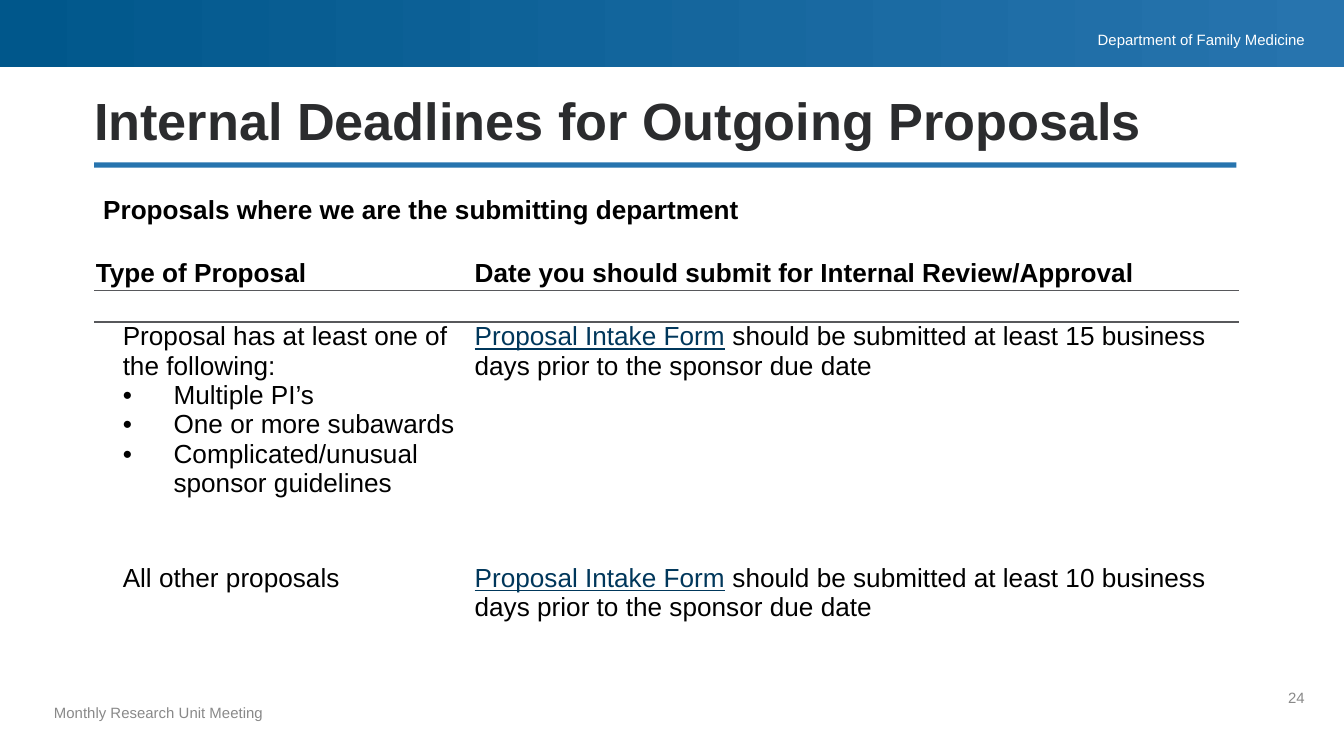
import pptx
import pptx.dml.color
import pptx.enum.shapes
import pptx.enum.text
import pptx.oxml
import pptx.oxml.ns
import pptx.util

Cm = pptx.util.Cm
Pt = pptx.util.Pt
RGBColor = pptx.dml.color.RGBColor
ALIGN = pptx.enum.text.PP_ALIGN
ANCHOR = pptx.enum.text.MSO_ANCHOR

BLUE = RGBColor(0x27, 0x74, 0xAE)
DEEP_BLUE = RGBColor(0x00, 0x57, 0x8B)
LINK = RGBColor(0x00, 0x37, 0x5B)
DARK = RGBColor(0x2B, 0x2C, 0x2E)
GREY = RGBColor(0x89, 0x89, 0x89)
RULE = RGBColor(0x57, 0x58, 0x5B)
BLACK = RGBColor(0, 0, 0)
WHITE = RGBColor(0xFF, 0xFF, 0xFF)

NS = pptx.oxml.ns.nsdecls("a")
NO_STYLE = "{2D5ABB26-0587-4C30-8999-92F81FD0307C}"
NO_INSETS = dict(margin_left=0, margin_top=0, margin_right=0, margin_bottom=0)
CELL = dict(NO_INSETS, margin_left=Cm(0.03), margin_right=Cm(0.03))
BODY = dict(name="Arial", size=Pt(14), bold=False)
HEADING = dict(BODY, bold=True)
SMALL = dict(name="Arial", size=Pt(8))


def set_attrs(obj, values):
    for name, value in values.items():
        setattr(obj, name, value)


def add_run(p, text, font, color=BLACK):
    r = p.add_run()
    r.text = text
    set_attrs(r.font, font)
    r.font.color.rgb = color


def add_bar(s, box):
    sp = s.shapes.add_shape(pptx.enum.shapes.MSO_SHAPE.RECTANGLE, *map(Cm, box))
    sp.shadow.inherit = False
    sp.line.fill.background()
    return sp


def add_text(s, box, text, font, color, frame, para):
    tf = s.shapes.add_textbox(*map(Cm, box)).text_frame
    set_attrs(tf, dict(word_wrap=True, **frame))
    p = tf.paragraphs[0]
    set_attrs(p, para)
    add_run(p, text, font, color)


def add_bullet(p):
    pPr = p._p.get_or_add_pPr()
    pPr.set("marL", str(Cm(0.96)))
    pPr.set("indent", str(-Cm(0.96)))
    pPr.append(pptx.oxml.parse_xml(f'<a:buFont {NS} typeface="Arial"/>'))
    pPr.append(pptx.oxml.parse_xml(f'<a:buChar {NS} char="•"/>'))


def add_border(cell, side):
    cell._tc.get_or_add_tcPr().insert(0, pptx.oxml.parse_xml(
        f'<a:{side} {NS} w="{Pt(1)}"><a:solidFill><a:srgbClr val="{RULE}"/>'
        f'</a:solidFill></a:{side}>'))


def add_table(s, box, widths, heights):
    table = s.shapes.add_table(len(heights), len(widths), *map(Cm, box)).table
    set_attrs(table, dict(first_row=False, horz_banding=False))
    table._tbl.tblPr.find(pptx.oxml.ns.qn("a:tableStyleId")).text = NO_STYLE
    for column, width in zip(table.columns, widths):
        column.width = Cm(width)
    for row, height in zip(table.rows, heights):
        row.height = Cm(height)
    for cell in table.iter_cells():
        set_attrs(cell, CELL)
        cell.fill.background()
        end = cell.text_frame.paragraphs[0]._p.get_or_add_endParaRPr()
        end.set("sz", "1400")
    return table


def fill_deadline(cell, days):
    p = cell.text_frame.paragraphs[0]
    add_run(p, "Proposal Intake Form", dict(BODY, underline=True), LINK)
    add_run(p, f" should be submitted at least {days} business days prior "
               "to the sponsor due date", BODY)
    return p


def add_deadlines(s):
    table = add_table(s, (1.78, 4.9, 21.64, 6.9),
                      (0.51, 6.65, 14.48), (0.59, 0.59, 4.57, 1.15))
    table.cell(0, 0).merge(table.cell(0, 1))
    table.cell(1, 0).merge(table.cell(1, 2))
    for col in range(3):
        add_border(table.cell(0, col), "lnB")
        add_border(table.cell(1, col), "lnT")

    for col, text in ((0, "Type of Proposal"),
                      (2, "Date you should submit for Internal Review/Approval")):
        add_run(table.cell(0, col).text_frame.paragraphs[0], text, HEADING)

    tf = table.cell(2, 1).text_frame
    add_run(tf.paragraphs[0], "Proposal has at least one of the following:", BODY)
    for text in ("Multiple PI’s", "One or more subawards",
                 "Complicated/unusual sponsor guidelines"):
        p = tf.add_paragraph()
        add_bullet(p)
        add_run(p, text, BODY)
    p.space_after = Pt(12)

    add_run(table.cell(3, 1).text_frame.paragraphs[0], "All other proposals", BODY)
    fill_deadline(table.cell(2, 2), 15)
    fill_deadline(table.cell(3, 2), 10).space_after = Pt(12)


def main():
    prs = pptx.Presentation()
    set_attrs(prs, dict(slide_width=Cm(25.4), slide_height=Cm(14.29)))
    s = prs.slides.add_slide(prs.slide_layouts[6])

    rule = add_bar(s, (1.78, 3.07, 21.59, 0.1))
    rule.fill.solid()
    rule.fill.fore_color.rgb = BLUE

    banner = add_bar(s, (0, 0, 25.4, 1.27))
    banner.fill.gradient()
    banner.fill.gradient_angle = 0
    for stop, color in zip(banner.fill.gradient_stops, (DEEP_BLUE, BLUE)):
        stop.color.rgb = color

    add_text(s, (18.29, 0.58, 6.38, 0.36), "Department of Family Medicine",
             SMALL, WHITE, NO_INSETS, dict(alignment=ALIGN.RIGHT))
    add_text(s, (1.02, 13.23, 9.91, 1.02), "Monthly Research Unit Meeting",
             SMALL, GREY, dict(NO_INSETS, margin_bottom=Cm(0.89),
                               vertical_anchor=ANCHOR.BOTTOM),
             dict(line_spacing=0.9))
    add_text(s, (23.39, 13.21, 1.27, 1.02), "24", SMALL, GREY,
             dict(NO_INSETS, margin_bottom=Cm(0.71)),
             dict(alignment=ALIGN.RIGHT))
    add_text(s, (1.78, 1.8, 21.59, 1.07),
             "Internal Deadlines for Outgoing Proposals",
             dict(name="Arial", size=Pt(28), bold=True), DARK,
             dict(NO_INSETS, vertical_anchor=ANCHOR.BOTTOM),
             dict(line_spacing=0.9))
    add_deadlines(s)
    add_text(s, (1.7, 3.53, 12.57, 0.86),
             "Proposals where we are the submitting department",
             HEADING, BLACK, {}, dict(space_after=Pt(12)))
    prs.save("out.pptx")


if __name__ == "__main__":
    main()
